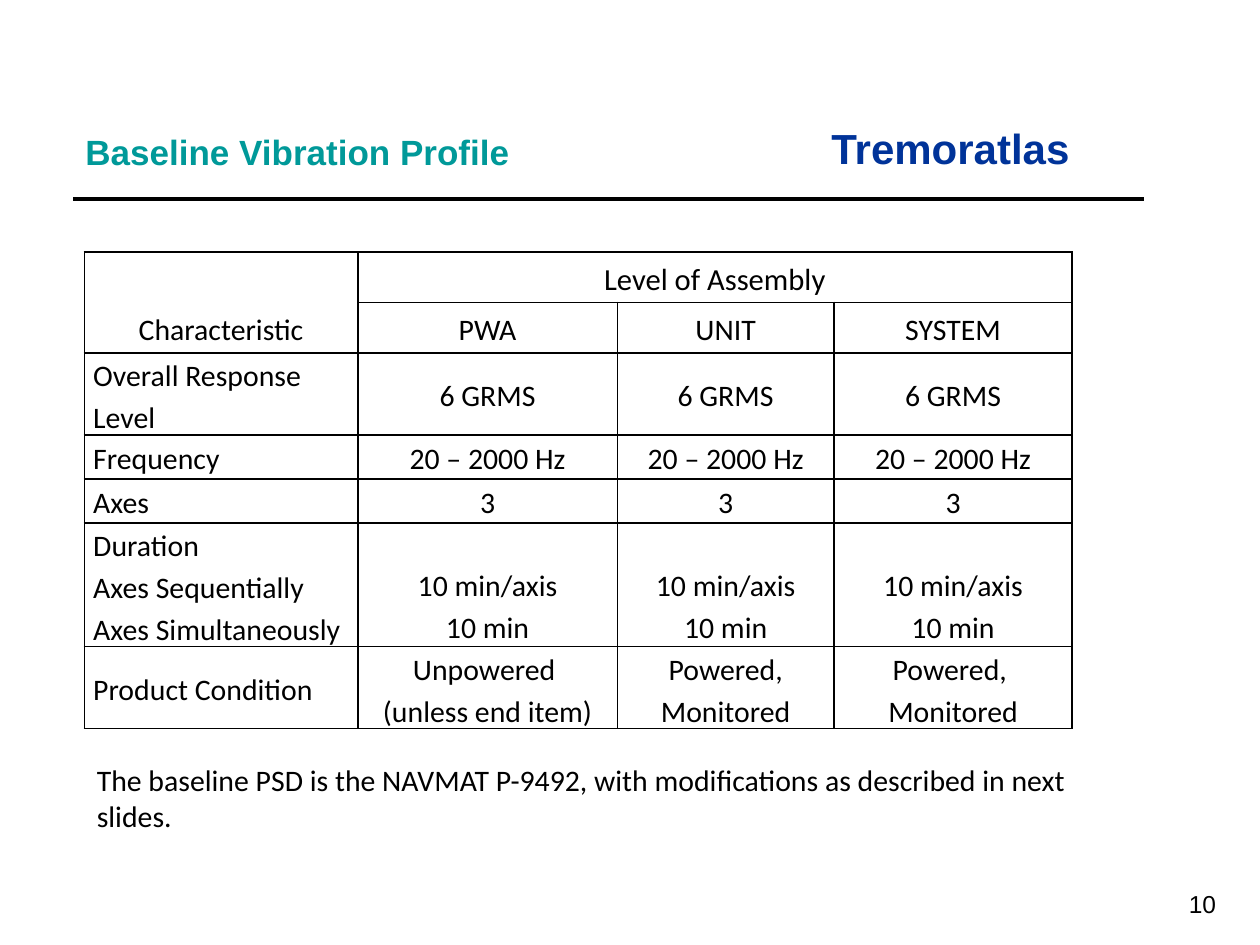
from lxml.etree import SubElement
from pptx import Presentation
from pptx.dml.color import RGBColor
from pptx.enum.shapes import MSO_CONNECTOR
from pptx.enum.text import MSO_ANCHOR, PP_ALIGN
from pptx.oxml.ns import qn
from pptx.util import Inches, Pt

BLACK = RGBColor(0x00, 0x00, 0x00)
TEAL = RGBColor(0x00, 0x99, 0x99)
NAVY = RGBColor(0x00, 0x33, 0x99)

COL_WIDTHS = [2.17, 2.06, 1.72, 1.89]
ROW_HEIGHTS = [0.4, 0.4, 0.65, 0.35, 0.35, 0.98, 0.65]
DURATION = "10 min/axis\n10 min"
ROWS = [
    ["", "Level of Assembly", "", ""],
    ["Characteristic", "PWA", "UNIT", "SYSTEM"],
    ["Overall Response Level"] + ["6 GRMS"] * 3,
    ["Frequency"] + ["20 – 2000 Hz"] * 3,
    ["Axes"] + ["3"] * 3,
    ["Duration\nAxes Sequentially\nAxes Simultaneously"] + [DURATION] * 3,
    ["Product Condition", "Unpowered \v(unless end item)",
     "Powered, Monitored", "Powered, \nMonitored"],
]


def format_text(tf, size, font, color=BLACK, bold=False, align=None, spacing=None):
    """Format every paragraph and run of a text frame."""
    for p in tf.paragraphs:
        p.alignment = align
        p.line_spacing = spacing
        for r in p.runs:
            r.font.size = Pt(size)
            r.font.name = font
            r.font.bold = bold
            r.font.color.rgb = color


def add_text(s, box, text, size, font, wrap=True, anchor=MSO_ANCHOR.TOP, **style):
    """Add a formatted text box."""
    tf = s.shapes.add_textbox(*map(Inches, box)).text_frame
    tf.text = text
    tf.word_wrap = wrap
    tf.vertical_anchor = anchor
    format_text(tf, size, font, **style)


def add_rule(s, x1, x2, y):
    """Add the horizontal rule under the heading."""
    line = s.shapes.add_connector(
        MSO_CONNECTOR.STRAIGHT, Inches(x1), Inches(y), Inches(x2), Inches(y))
    line.line.color.rgb = BLACK
    line.line.width = Pt(2.25)
    SubElement(line._element.spPr, qn("a:effectLst"))


def set_borders(cell, hidden=""):
    """Draw black cell borders, leaving out the hidden side."""
    tc_pr = cell._tc.get_or_add_tcPr()
    for side in "LRTB":
        ln = SubElement(tc_pr, qn(f"a:ln{side}"), w=str(Pt(1)))
        if side == hidden:
            SubElement(ln, qn("a:noFill"))
        else:
            fill = SubElement(ln, qn("a:solidFill"))
            SubElement(fill, qn("a:srgbClr"), val=str(BLACK))


def fill_cell(cell, row, col, text):
    """Write and format one cell of the profile table."""
    cell.margin_left = cell.margin_right = Inches(0.07)
    cell.margin_top = cell.margin_bottom = 0
    cell.vertical_anchor = MSO_ANCHOR.BOTTOM if text == DURATION else MSO_ANCHOR.MIDDLE
    set_borders(cell, {(0, 0): "B", (1, 0): "T"}.get((row, col), ""))
    cell.fill.background()
    cell.text_frame.text = text
    centred = col > 0 or row < 2
    format_text(cell.text_frame, 17.5 if row == 0 else 17, "Calibri",
                align=PP_ALIGN.CENTER if centred else PP_ALIGN.LEFT, spacing=1.15)


def add_profile_table(s, left, top):
    """Add the vibration profile table."""
    table = s.shapes.add_table(
        len(ROWS), len(COL_WIDTHS), Inches(left), Inches(top),
        Inches(sum(COL_WIDTHS)), Inches(sum(ROW_HEIGHTS))).table
    table.first_row = table.horz_banding = False
    for column, width in zip(table.columns, COL_WIDTHS):
        column.width = Inches(width)
    for i, (height, texts) in enumerate(zip(ROW_HEIGHTS, ROWS)):
        table.rows[i].height = Inches(height)
        for j, text in enumerate(texts):
            fill_cell(table.cell(i, j), i, j, text)
    table.cell(0, 1).merge(table.cell(0, 3))


def main():
    """Build and save the slide."""
    prs = Presentation()
    prs.slide_width, prs.slide_height = Inches(10), Inches(7.5)
    s = prs.slides.add_slide(prs.slide_layouts[6])
    add_text(s, (7.67, 6.92, 2.08, 0.5), "10", 14, "Arial", wrap=False,
             anchor=MSO_ANCHOR.MIDDLE, align=PP_ALIGN.RIGHT)
    add_rule(s, 0.58, 9.08, 1.58)
    add_text(s, (0.58, 1.08, 5, 0.42), "Baseline Vibration Profile", 20, "Arial",
             color=TEAL, bold=True, spacing=0.7)
    add_text(s, (6.5, 0.92, 2.33, 0.5), "Tremoratlas", 24, "Arial", wrap=False,
             color=NAVY, bold=True, align=PP_ALIGN.LEFT)
    add_profile_table(s, 0.67, 2)
    add_text(s, (0.67, 6, 8.33, 0.67),
             "The baseline PSD is the NAVMAT P-9492, with modifications "
             "as described in next slides.", 17, "Calibri")
    prs.save("out.pptx")


if __name__ == "__main__":
    main()
